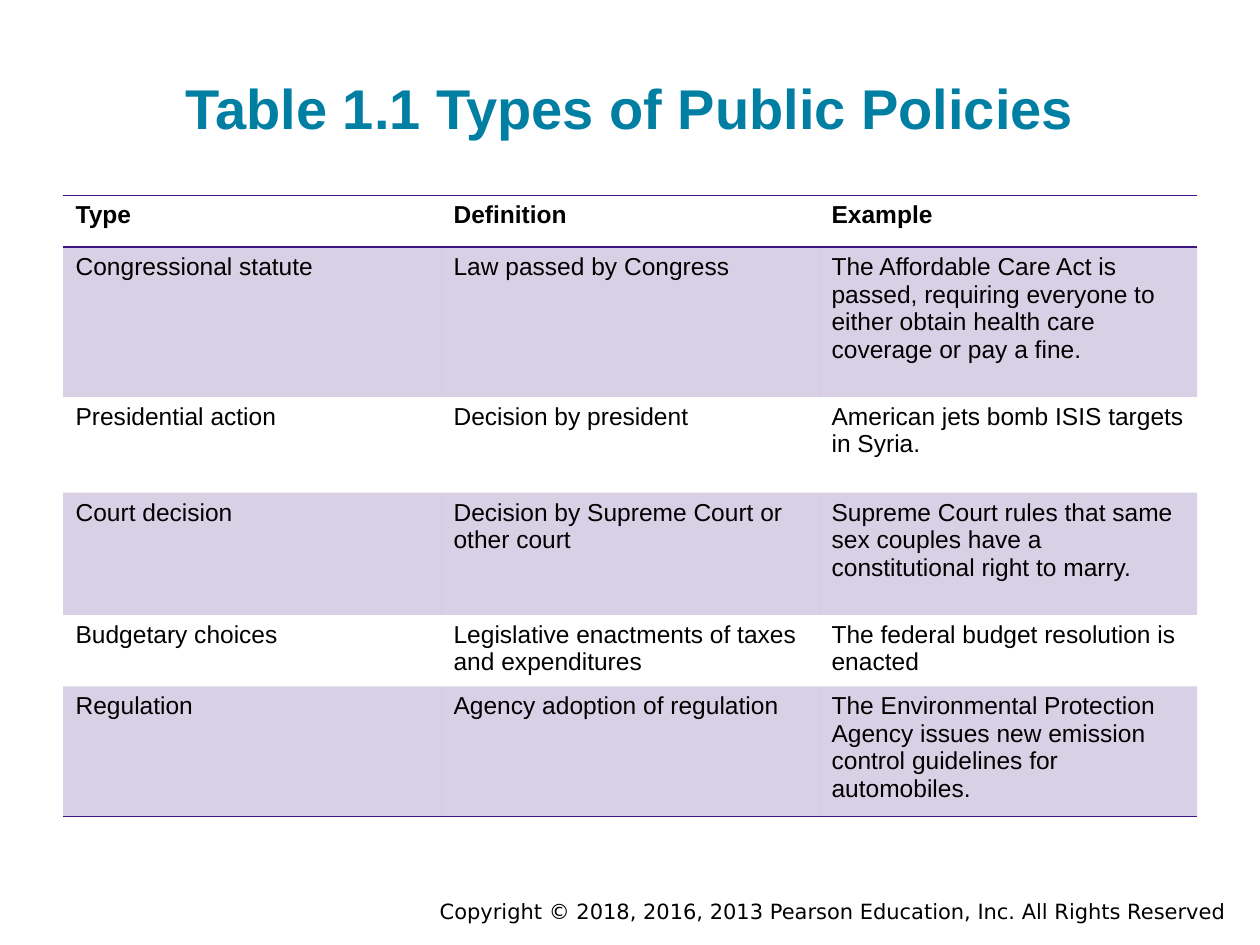
import pptx
import pptx.util
import pptx.dml.color
import pptx.enum.text
import pptx.oxml
import pptx.oxml.ns
from lxml import etree

Inches = pptx.util.Inches
Pt = pptx.util.Pt
ALIGN = pptx.enum.text.PP_ALIGN
ANCHOR = pptx.enum.text.MSO_ANCHOR
qn = pptx.oxml.ns.qn

COLORS = {"title": "007FA3", "text": "000000", "accent": "3C1581"}
PLAIN_STYLE = "{2D5ABB26-0587-4C30-8999-92F81FD0307C}"
ROW_HEIGHTS = [0.41, 1.19, 0.76, 0.97, 0.54, 0.97]
POLICIES = [
    ["Type", "Definition", "Example"],
    ["Congressional statute", "Law passed by Congress",
     "The Affordable Care Act is passed, requiring everyone to either obtain "
     "health care coverage or pay a fine."],
    ["Presidential action", "Decision by president",
     "American jets bomb ISIS targets in Syria."],
    ["Court decision", "Decision by Supreme Court or other court",
     "Supreme Court rules that same sex couples have a constitutional right to marry."],
    ["Budgetary choices", "Legislative enactments of taxes and expenditures",
     "The federal budget resolution is enacted"],
    ["Regulation", "Agency adoption of regulation",
     "The Environmental Protection Agency issues new emission control guidelines "
     "for automobiles."],
]


class SlideBuilder:
    def __init__(self, s, font="Arial"):
        self.s = s
        self.font = font

    def run(self, p, text, size, color="text", bold=False, font=None):
        r = p.add_run()
        r.text = text
        r.font.name = font or self.font
        r.font.size = Pt(size)
        r.font.bold = bold
        r.font.color.rgb = pptx.dml.color.RGBColor.from_string(COLORS[color])

    def text(self, box, text, size, align, anchor=ANCHOR.TOP, inset=0.05, **style):
        sp = self.s.shapes.add_textbox(*(Inches(v) for v in box))
        tf = sp.text_frame
        tf.word_wrap = True
        tf.vertical_anchor = anchor
        tf.margin_top = tf.margin_bottom = Inches(inset)
        p = tf.paragraphs[0]
        p.alignment = align
        self.run(p, text, size, **style)

    def border(self, cell, side):
        ln = etree.SubElement(cell._tc.get_or_add_tcPr(), qn(f"a:ln{side}"), w=str(Pt(1)))
        fill = etree.SubElement(ln, qn("a:solidFill"))
        etree.SubElement(fill, qn("a:srgbClr"), val=COLORS["accent"])

    def shade(self, cell):
        cell.fill.solid()
        cell.fill.fore_color.rgb = pptx.dml.color.RGBColor.from_string(COLORS["accent"])
        color = cell._tc.tcPr.find(".//" + qn("a:solidFill") + "/" + qn("a:srgbClr"))
        for clr in cell._tc.tcPr.findall(qn("a:solidFill") + "/" + qn("a:srgbClr")):
            color = clr
        etree.SubElement(color, qn("a:alpha"), val="20000")

    def table(self, left, top, width, rows, heights):
        frame = self.s.shapes.add_table(
            len(rows), len(rows[0]), Inches(left), Inches(top),
            Inches(width), Inches(sum(heights)))
        table = frame.table
        table.horz_banding = False
        table._tbl.tblPr.find(qn("a:tableStyleId")).text = PLAIN_STYLE
        last = len(rows) - 1
        for i, row in enumerate(rows):
            table.rows[i].height = Inches(heights[i])
            for j, text in enumerate(row):
                cell = table.cell(i, j)
                self.run(cell.text_frame.paragraphs[0], text, 14, bold=i == 0)
                if i == 0:
                    self.border(cell, "T")
                if i in (0, last):
                    self.border(cell, "B")
                if i % 2:
                    self.shade(cell)
                else:
                    cell.fill.background()


def main():
    prs = pptx.Presentation()
    prs.slide_width = Inches(10)
    prs.slide_height = Inches(7.5)
    b = SlideBuilder(prs.slides.add_slide(prs.slide_layouts[6]))
    b.text((2, 7.08, 7.83, 0.3),
           "Copyright © 2018, 2016, 2013 Pearson Education, Inc. All Rights Reserved",
           12, ALIGN.RIGHT, font="DejaVu Sans")
    b.text((0.5, 0.24, 9, 0.98), "Table 1.1 Types of Public Policies", 32,
           ALIGN.CENTER, ANCHOR.BOTTOM, 0.1, color="title", bold=True)
    b.table(0.5, 1.55, 9, POLICIES, ROW_HEIGHTS)
    prs.save("out.pptx")


if __name__ == "__main__":
    main()
